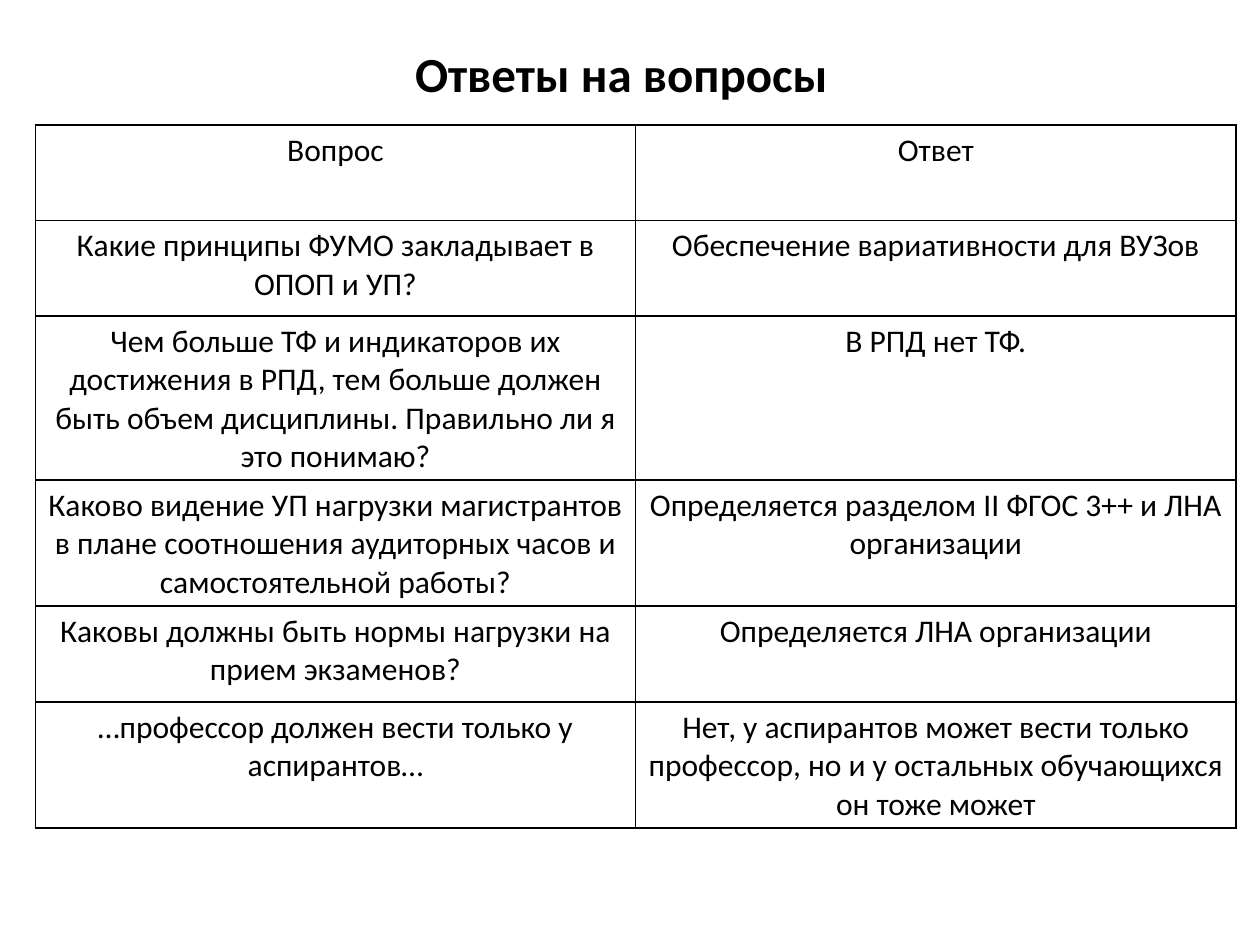
from dataclasses import dataclass

from lxml.etree import SubElement as Sub
from pptx import Presentation as Deck
from pptx.dml.color import RGBColor as Color
from pptx.enum.text import MSO_ANCHOR as Anchor, PP_ALIGN as Align
from pptx.oxml.ns import qn
from pptx.util import Inches, Pt


@dataclass(frozen=True)
class Theme:
    font: str = "Calibri"
    ink: str = "000000"
    paper: str = "FFFFFF"
    head: int = 28
    body: int = 18
    rule: int = 1


LOOK = Theme()
TITLE = "Ответы на вопросы"
ROWS = [
    ("Вопрос", "Ответ"),
    ("Какие принципы ФУМО закладывает в ОПОП и УП?",
     "Обеспечение вариативности для ВУЗов"),
    ("Чем больше ТФ и индикаторов их достижения в РПД, тем больше должен "
     "быть объем дисциплины. Правильно ли я это понимаю?",
     "В РПД нет ТФ."),
    ("Каково видение УП нагрузки магистрантов в плане соотношения "
     "аудиторных часов и самостоятельной работы?",
     "Определяется разделом II ФГОС 3++ и ЛНА организации"),
    ("Каковы должны быть нормы нагрузки на прием экзаменов?",
     "Определяется ЛНА организации"),
    ("…профессор должен вести только у аспирантов…",
     "Нет, у аспирантов может вести только профессор, но и у остальных "
     "обучающихся он тоже может"),
]


def write(frame, text, size, bold=False):
    para = frame.paragraphs[0]
    para.alignment = Align.CENTER
    run = para.add_run()
    run.text = text
    font = run.font
    font.name = LOOK.font
    font.size = Pt(size)
    font.bold = bold
    font.color.rgb = Color.from_string(LOOK.ink)


def add_title(slide):
    box = slide.shapes.add_textbox(
        Inches(0.43), Inches(0.3), Inches(9), Inches(0.7))
    frame = box.text_frame
    frame.word_wrap = True
    frame.vertical_anchor = Anchor.TOP
    write(frame, TITLE, LOOK.head, bold=True)


def add_edges(cell):
    props = cell._tc.get_or_add_tcPr()
    for side in ("a:lnL", "a:lnR", "a:lnT", "a:lnB"):
        line = Sub(props, qn(side), w=str(Pt(LOOK.rule)))
        fill = Sub(line, qn("a:solidFill"))
        Sub(fill, qn("a:srgbClr"), val=LOOK.ink)


def add_grid(slide):
    wide, high = Inches(4.765), Inches(0.76)
    count = len(ROWS)
    table = slide.shapes.add_table(
        count, 2, Inches(0.28), Inches(0.99), wide * 2, high * count).table
    table.first_row = False
    table.horz_banding = False
    for col in table.columns:
        col.width = wide
    for row, texts in zip(table.rows, ROWS):
        row.height = high
        for cell, text in zip(row.cells, texts):
            add_edges(cell)
            cell.fill.solid()
            cell.fill.fore_color.rgb = Color.from_string(LOOK.paper)
            write(cell.text_frame, text, LOOK.body)


def main():
    deck = Deck()
    deck.slide_width = Inches(10)
    deck.slide_height = Inches(7.5)
    slide = deck.slides.add_slide(deck.slide_layouts[6])
    add_title(slide)
    add_grid(slide)
    deck.save("out.pptx")


if __name__ == "__main__":
    main()
